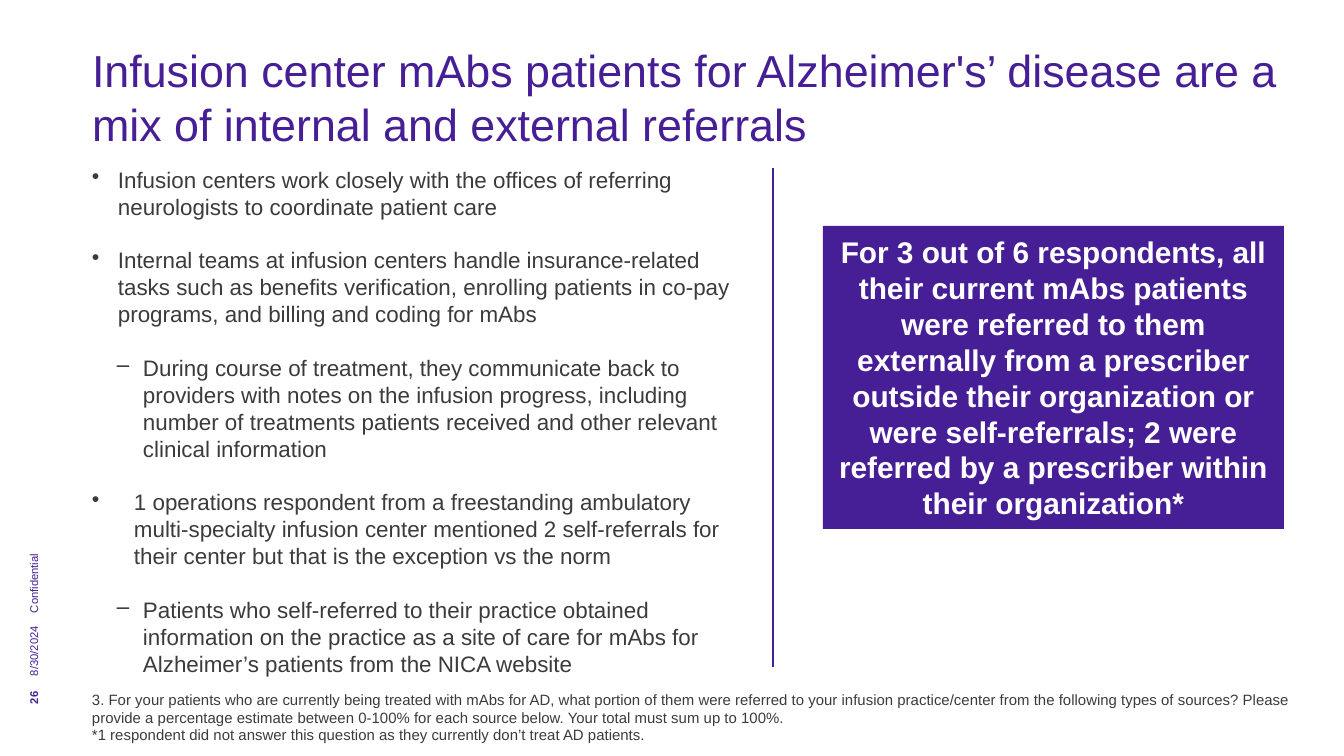
"""Build the slide on referral sources of infusion center mAbs patients."""
from dataclasses import dataclass

from lxml import etree
from pptx import Presentation, util as u
from pptx.dml.color import RGBColor
from pptx.enum import shapes, text
from pptx.oxml.ns import qn

TITLE = "Infusion center mAbs patients for Alzheimer's’ disease are a mix of internal and external referrals"
BULLETS = [
    ("•", 26, 26, "Infusion centers work closely with the offices of referring neurologists to coordinate patient care"),
    ("•", 26, 26, "Internal teams at infusion centers handle insurance-related tasks such as benefits verification, "
     "enrolling patients in co-pay programs, and billing and coding for mAbs"),
    ("–", 51, 26, "During course of treatment, they communicate back to providers with notes on the infusion progress, "
     "including number of treatments patients received and other relevant clinical information"),
    ("•", 42, 42, "1 operations respondent from a freestanding ambulatory multi-specialty infusion center mentioned "
     "2 self-referrals for their center but that is the exception vs the norm"),
    ("–", 51, 26, "Patients who self-referred to their practice obtained information on the practice as a site of care "
     "for mAbs for Alzheimer’s patients from the NICA website"),
]
CALLOUT = ("For 3 out of 6 respondents, all their current mAbs patients were referred to them externally from a "
           "prescriber outside their organization or were self-referrals; 2 were referred by a prescriber within "
           "their organization*")
FOOTNOTES = [
    "3. For your patients who are currently being treated with mAbs for AD, what portion of them were referred to "
    "your infusion practice/center from the following types of sources? Please provide a percentage estimate "
    "between 0-100% for each source below. Your total must sum up to 100%.",
    "*1 respondent did not answer this question as they currently don’t treat AD patients.",
]
MARGIN_LABELS = [("Confidential", 613, 257, False), ("8/30/2024", 676, 63, False), ("26", 704, 27, True)]
MARGIN_CENTER, MARGIN_HEIGHT = 35, 16
LEFT = 92


@dataclass(frozen=True)
class Theme:
    font: str = "Arial"
    purple: RGBColor = RGBColor(0x46, 0x1E, 0x96)
    gray: RGBColor = RGBColor(0x3B, 0x3B, 0x3B)
    white: RGBColor = RGBColor(0xFF, 0xFF, 0xFF)
    title: int = 24
    callout: int = 16
    body: int = 12
    note: int = 8
    margin: int = 6
    gap: float = 14.4


THEME = Theme()


def px(n):
    return u.Emu(round(n * 914400 / 134.4))


def write(tf, lines, size, color, bold=False):
    tf.word_wrap = True
    for i, line in enumerate(lines):
        p = tf.paragraphs[0] if i == 0 else tf.add_paragraph()
        p.text = line
        p.font.name, p.font.size, p.font.bold = THEME.font, u.Pt(size), bold
        p.font.color.rgb = color


def add_text(s, box, lines, size, color, bold=False):
    sp = s.shapes.add_textbox(*map(px, box))
    tf = sp.text_frame
    tf.margin_left = tf.margin_right = tf.margin_top = tf.margin_bottom = 0
    write(tf, lines, size, color, bold)
    return sp


def set_bullet(p, char, left, hang):
    pPr = p._p.get_or_add_pPr()
    pPr.set("marL", str(px(left)))
    pPr.set("indent", str(-px(hang)))
    bullet = etree.Element(qn("a:buChar"), char=char)
    pPr.find(qn("a:defRPr")).addprevious(bullet)


def add_bullets(s):
    sp = add_text(s, (LEFT, 166, 656, 525), [b[3] for b in BULLETS], THEME.body, THEME.gray)
    for i, (p, (char, left, hang, _)) in enumerate(zip(sp.text_frame.paragraphs, BULLETS)):
        p.level = int(char == "–")
        if i:
            p.space_before = u.Pt(THEME.gap)
        set_bullet(p, char, left, hang)


def add_callout(s):
    sp = s.shapes.add_shape(shapes.MSO_SHAPE.RECTANGLE, *map(px, (823, 226, 461, 303)))
    sp.shadow.inherit = False
    sp.fill.solid()
    sp.fill.fore_color.rgb = THEME.purple
    sp.line.fill.background()
    write(sp.text_frame, [CALLOUT], THEME.callout, THEME.white, bold=True)
    sp.text_frame.vertical_anchor = text.MSO_ANCHOR.MIDDLE
    sp.text_frame.paragraphs[0].alignment = text.PP_ALIGN.CENTER


def add_divider(s):
    line = s.shapes.add_connector(shapes.MSO_CONNECTOR.STRAIGHT, *map(px, (773, 168, 773, 667)))
    line.line.color.rgb = THEME.purple
    line.line.width = u.Pt(0.75)
    etree.SubElement(line._element.spPr, qn("a:effectLst"))


def add_margin_labels(s):
    for label, bottom, width, bold in MARGIN_LABELS:
        box = (MARGIN_CENTER - width / 2, bottom - (width + MARGIN_HEIGHT) / 2, width, MARGIN_HEIGHT)
        sp = add_text(s, box, [label], THEME.margin, THEME.purple, bold)
        sp.rotation = 270


def main():
    prs = Presentation()
    prs.slide_width, prs.slide_height = px(1344), px(756)
    s = prs.slides.add_slide(prs.slide_layouts[6])
    add_text(s, (LEFT, 43, 1212, 58), [TITLE], THEME.title, THEME.purple)
    add_margin_labels(s)
    notes = add_text(s, (LEFT, 677, 1210, 67), FOOTNOTES, THEME.note, THEME.gray)
    notes.text_frame.vertical_anchor = text.MSO_ANCHOR.BOTTOM
    add_bullets(s)
    add_callout(s)
    add_divider(s)
    prs.save("out.pptx")


if __name__ == "__main__":
    main()
